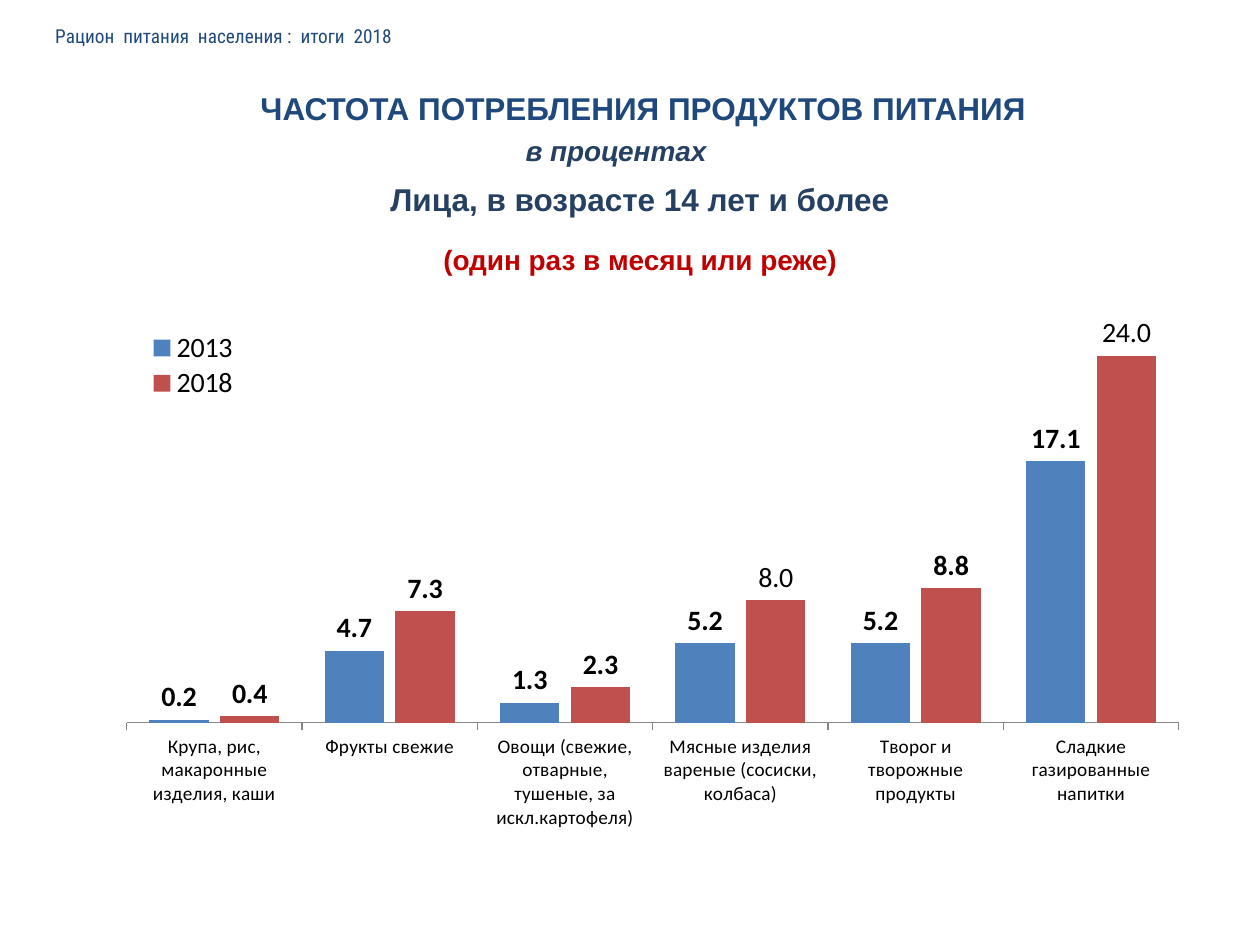
"""Build a slide on how often foods are eaten, with a clustered column chart."""
from dataclasses import dataclass

from lxml import etree
from pptx import Presentation
from pptx import util as u
from pptx.chart.data import CategoryChartData
from pptx.dml.color import RGBColor
from pptx.enum import chart as ch, text
from pptx.oxml.ns import qn


@dataclass(frozen=True)
class Theme:
    blue: str = "1F497D"
    navy: str = "254061"
    red: str = "C00000"
    black: str = "000000"
    axis: str = "868686"
    series: tuple = ("4F81BD", "C0504D")
    head: str = "Arial"
    body: str = "Calibri"
    running: str = "Roboto Condensed"
    large: int = 18
    medium: int = 16
    small: int = 11


class Deck:
    def __init__(self, prs, theme):
        self.theme = theme
        self.s = prs.slides.add_slide(prs.slide_layouts[6])

    def style(self, font, size, color, **fmt):
        fmt["size"] = u.Pt(size)
        for name, value in fmt.items():
            setattr(font, name, value)
        font.color.rgb = RGBColor.from_string(color)

    def label(self, box, words, size, color, align=text.PP_ALIGN.LEFT, **fmt):
        tf = self.s.shapes.add_textbox(*map(u.Inches, box)).text_frame
        tf.word_wrap = False
        tf.auto_size = text.MSO_AUTO_SIZE.SHAPE_TO_FIT_TEXT
        p = tf.paragraphs[0]
        p.alignment = align
        r = p.add_run()
        r.text = words
        self.style(r.font, size, color, **fmt)

    def place(self, parent, index, target, box):
        layout = parent.find(qn("c:layout"))
        if layout is None:
            layout = etree.Element(qn("c:layout"))
            parent.insert(index, layout)
        manual = etree.SubElement(layout, qn("c:manualLayout"))
        values = [("layoutTarget", target)] if target else []
        values += [("xMode", "edge"), ("yMode", "edge"), *zip("xywh", box)]
        for tag, value in values:
            etree.SubElement(manual, qn("c:" + tag)).set("val", str(value))

    def columns(self, box, cats, series, plot_box, legend_box, plain_points):
        t = self.theme
        data = CategoryChartData(number_format="General")
        data.categories = cats
        for name, values in series.items():
            data.add_series(name, values)
        chart = self.s.shapes.add_chart(
            ch.XL_CHART_TYPE.COLUMN_CLUSTERED, *map(u.Inches, box), data).chart
        self.style(chart.font, t.large, t.black, name=t.body)
        chart.has_title = False
        chart.has_legend = True
        legend = chart.legend
        legend.position = ch.XL_LEGEND_POSITION.RIGHT
        legend.include_in_layout = False
        self.style(legend.font, t.medium, t.black, name=t.body)
        plot = chart.plots[0]
        for name, value in dict(gap_width=76, overlap=-19, vary_by_categories=False).items():
            setattr(plot, name, value)
        for ser, color in zip(plot.series, t.series):
            ser.invert_if_negative = False
            ser.format.fill.solid()
            ser.format.fill.fore_color.rgb = RGBColor.from_string(color)
            labels = ser.data_labels
            labels.show_value = True
            labels.position = ch.XL_LABEL_POSITION.OUTSIDE_END
            self.style(labels.font, t.medium, t.black, name=t.body, bold=True)
            for i, words in plain_points.get(ser.name, {}).items():
                point = ser.points[i].data_label
                r = point.text_frame.paragraphs[0].add_run()
                r.text = words
                self.style(r.font, t.medium, t.black, name=t.body, bold=False)
                point.position = ch.XL_LABEL_POSITION.OUTSIDE_END
        axis = chart.value_axis
        for name, value in dict(visible=False, has_major_gridlines=False,
                                minimum_scale=0, maximum_scale=30).items():
            setattr(axis, name, value)
        axis = chart.category_axis
        axis.major_tick_mark = ch.XL_TICK_MARK.OUTSIDE
        axis.format.line.color.rgb = RGBColor.from_string(t.axis)
        self.style(axis.tick_labels.font, t.small, t.black, name=t.body)
        root = chart.element
        self.place(root.find(".//" + qn("c:plotArea")), 0, "inner", plot_box)
        self.place(root.find(".//" + qn("c:legend")), 1, None, legend_box)


def main():
    prs = Presentation()
    prs.slide_width, prs.slide_height = u.Inches(10), u.Inches(7.5)
    t = Theme()
    deck = Deck(prs, t)
    center = text.PP_ALIGN.CENTER
    deck.columns(
        (0.83, 1.94, 8.79, 5.2),
        ["Крупа, рис, макаронные изделия, каши", "Фрукты свежие",
         "Овощи (свежие, отварные, тушеные, за искл.картофеля)",
         "Мясные изделия вареные (сосиски, колбаса)",
         "Творог и творожные продукты", "Сладкие газированные напитки"],
        {"2013": (0.2, 4.7, 1.3, 5.2, 5.2, 17.1), "2018": (0.4, 7.3, 2.3, 8, 8.8, 24)},
        plot_box=(0.02, 0.03, 0.95, 0.7),
        legend_box=(0.03, 0.13, 0.1, 0.11),
        plain_points={"2018": {3: "8.0", 5: "24.0"}})
    deck.label((0.34, 0.14, 2.93, 0.29), "Рацион  питания  населения :  итоги  2018",
               t.small, t.blue, name=t.running)
    deck.label((1.93, 0.66, 6.35, 0.4), "ЧАСТОТА ПОТРЕБЛЕНИЯ ПРОДУКТОВ ПИТАНИЯ",
               t.large, t.blue, center, name=t.head, bold=True)
    deck.label((4.06, 1.01, 1.66, 0.37), "в процентах",
               t.medium, t.navy, center, name=t.head, bold=True, italic=True)
    deck.label((3, 1.38, 4.21, 0.4), "Лица, в возрасте 14 лет и более",
               t.large, t.navy, name=t.head, bold=True)
    deck.label((3.42, 1.88, 3.37, 0.37), "(один раз в месяц или реже)",
               t.medium, t.red, name=t.head, bold=True)
    prs.save("out.pptx")


if __name__ == "__main__":
    main()
